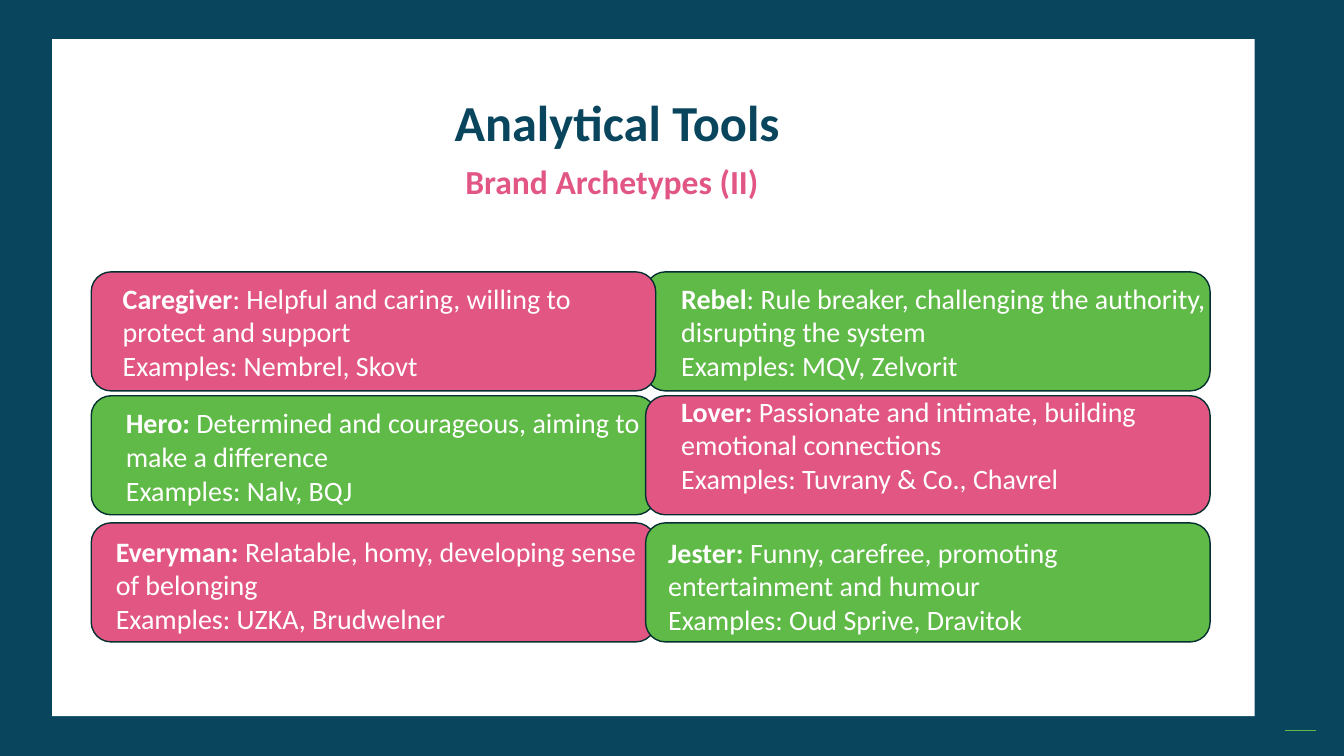
from dataclasses import dataclass
from lxml import etree
from pptx import Presentation
from pptx.dml.color import RGBColor as RGB
from pptx.enum.shapes import MSO_CONNECTOR as CONN, MSO_SHAPE as SHAPE
from pptx.enum.text import MSO_ANCHOR as ANCHOR, MSO_AUTO_SIZE as AUTO, PP_ALIGN as ALIGN
from pptx.oxml.ns import qn
from pptx.util import Pt


@dataclass(frozen=True)
class Theme:
    navy: RGB = RGB(0x09, 0x46, 0x5E)
    pink: RGB = RGB(0xE2, 0x56, 0x84)
    green: RGB = RGB(0x60, 0xBA, 0x47)
    outline: RGB = RGB(0x04, 0x30, 0x30)
    white: RGB = RGB(0xFF, 0xFF, 0xFF)
    font: str = "Calibri"
    title: int = 36
    subtitle: int = 24
    body: int = 20


theme = Theme()


def write(p, text, size=theme.body, color=theme.white, bold=False, align=ALIGN.LEFT):
    p.alignment = align
    r = p.add_run()
    r.text = text
    r.font.name = theme.font
    r.font.size = Pt(size)
    r.font.bold = bold
    r.font.color.rgb = color


prs = Presentation()
prs.slide_width, prs.slide_height = Pt(960), Pt(540)
slide = prs.slides.add_slide(prs.slide_layouts[5])
slide.background.fill.solid()
slide.background.fill.fore_color.rgb = theme.navy
shapes = slide.shapes

panel = shapes.add_shape(SHAPE.RECTANGLE, Pt(37.2), Pt(28), Pt(859), Pt(483.6))
panel.shadow.inherit = False
panel.fill.solid()
panel.fill.fore_color.rgb = theme.white
panel.line.fill.background()

rule = shapes.add_connector(CONN.STRAIGHT, Pt(918), Pt(522), Pt(940), Pt(522))
rule.line.color.rgb = theme.green
rule.line.width = Pt(1)
etree.SubElement(rule._element.spPr, qn("a:effectLst"))

left, right = 65.2, 461.2
row1, row2, row3 = 194.2, 282.7, 373.5
cards = [
    (right, row1, theme.green, 479.5, 197.3, 415, "Rebel",
     ": Rule breaker, challenging the authority, disrupting the system", "Examples: MQV, Zelvorit"),
    (left, row1, theme.pink, 80.6, 197.3, 395, "Caregiver",
     ": Helpful and caring, willing to protect and support", "Examples: Nembrel, Skovt"),
    (left, row2, theme.green, 82.8, 286.4, 383, "Hero: ",
     "Determined and courageous, aiming to make a difference", "Examples: Nalv, BQJ"),
    (left, row3, theme.pink, 75.6, 378, 399.6, "Everyman: ",
     "Relatable, homy, developing sense of belonging", "Examples: UZKA, Brudwelner"),
    (right, row3, theme.green, 470.2, 378.7, 403.2, "Jester: ",
     "Funny, carefree, promoting entertainment and humour", "Examples: Oud Sprive, Dravitok"),
    (right, row2, theme.pink, 479.5, 278, 399.6, "Lover: ",
     "Passionate and intimate, building emotional connections", "Examples: Tuvrany & Co., Chavrel"),
]
for x, y, color, text_x, text_y, text_w, name, trait, examples in cards:
    sp = shapes.add_shape(SHAPE.ROUNDED_RECTANGLE, Pt(x), Pt(y), Pt(403.2), Pt(85))
    sp.shadow.inherit = False
    sp.fill.solid()
    sp.fill.fore_color.rgb = color
    sp.line.color.rgb = theme.outline
    sp.line.width = Pt(1)

    tf = shapes.add_textbox(Pt(text_x), Pt(text_y), Pt(text_w), Pt(80)).text_frame
    tf.word_wrap = True
    tf.auto_size = AUTO.SHAPE_TO_FIT_TEXT
    write(tf.paragraphs[0], name, bold=True)
    write(tf.paragraphs[0], trait)
    write(tf.add_paragraph(), examples)

tf = shapes.add_textbox(Pt(322.6), Pt(111.6), Pt(229), Pt(36)).text_frame
tf.word_wrap = True
write(tf.paragraphs[0], "Brand Archetypes (II)", size=theme.subtitle,
      color=theme.pink, bold=True, align=ALIGN.CENTER)

title = shapes.title
title.left, title.top, title.width, title.height = Pt(317.5), Pt(66.8), Pt(332), Pt(44.6)
tf = title.text_frame
tf.vertical_anchor = ANCHOR.MIDDLE
tf.auto_size = AUTO.NONE
tf.paragraphs[0].line_spacing = 0.9
write(tf.paragraphs[0], "Analytical Tools", size=theme.title, color=theme.navy, bold=True)
shapes._spTree.append(title._element)

prs.save("out.pptx")
